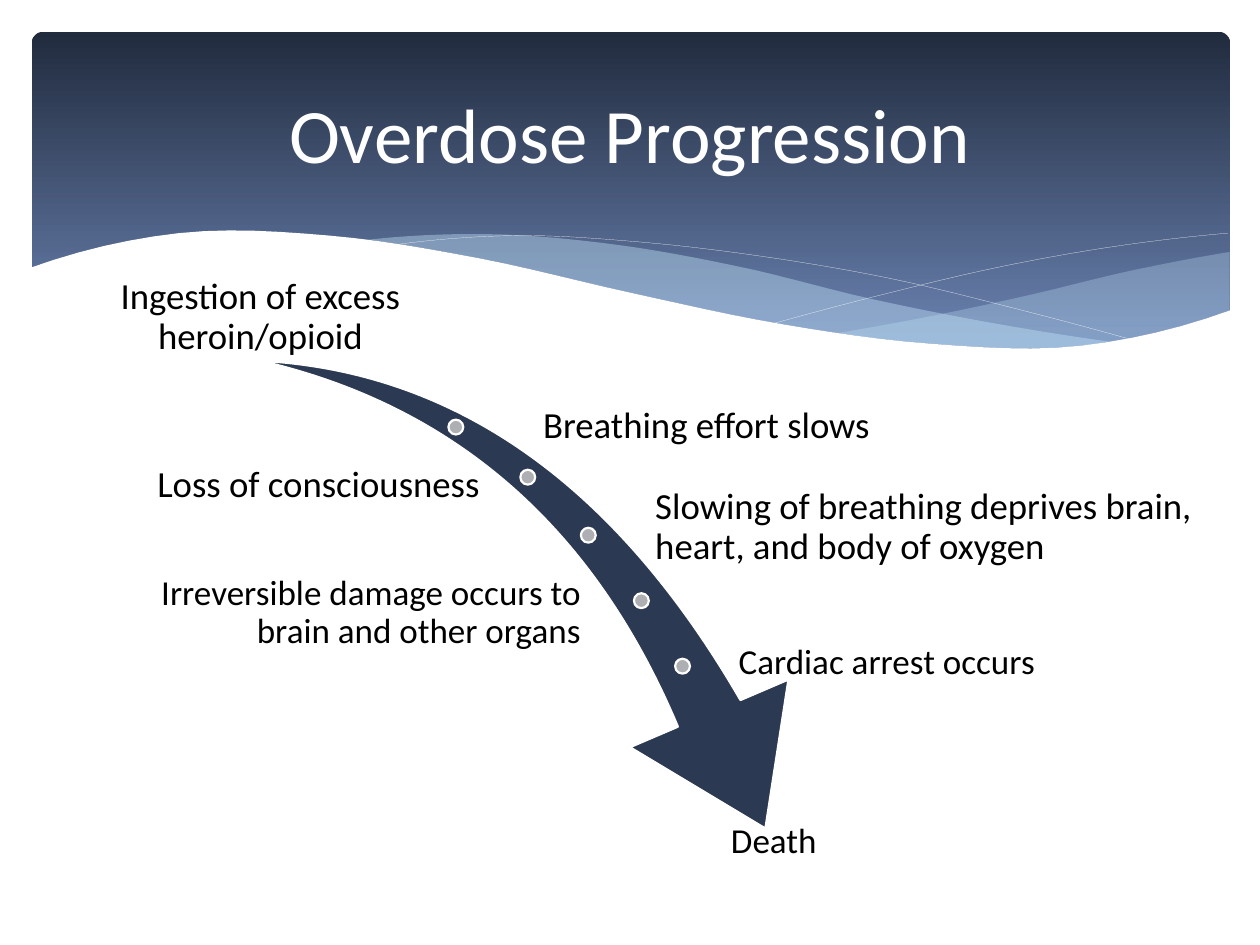
from math import floor

from lxml import etree
from pptx import Presentation
from pptx.dml.color import RGBColor
from pptx.enum.shapes import MSO_SHAPE
from pptx.enum.text import MSO_ANCHOR, PP_ALIGN
from pptx.oxml.ns import qn
from pptx.util import Cm, Pt

ROUND, DOT, SWOOSH = MSO_SHAPE.ROUNDED_RECTANGLE, MSO_SHAPE.OVAL, MSO_SHAPE.SWOOSH_ARROW
LEFT, MID, RIGHT = PP_ALIGN.LEFT, PP_ALIGN.CENTER, PP_ALIGN.RIGHT
TOP, CENTER, BOTTOM = MSO_ANCHOR.TOP, MSO_ANCHOR.MIDDLE, MSO_ANCHOR.BOTTOM

COLORS = {"white": "FFFFFF", "black": "000000", "night": "212B3E", "steel": "6981AF",
          "ice": "C6E7FC", "arrow": "2C3952", "dot": "ADAFB3"}
FONT = "Calibri"

# A wave is its first x, its last x and its depths at equal steps between them,
# all in centimetres from the corner of the banner
SHORE = (-0.06, 24.18, [4.77, 4.06, 4.11, 4.57, 5.26, 5.89, 6.29, 6.33, 5.61])
CREST = (16.15, 24.15, [6.09, 5.73, 5.3, 4.82, 4.44])
SWELL = (6.62, 22.04, [4.21, 4.08, 4.29, 4.75, 5.38, 5.89, 6.29])
FALL = (7.21, 22.4, [4.31, 4.11, 4.24, 4.54, 4.98, 5.59, 6.27])
RISE = (14.93, 24.12, [5.89, 5.28, 4.74, 4.33, 4.06])
FLOOR = 7.72     # lower edge of the white area under the shore
SAMPLES = 48     # straight pieces drawn for each wave

DOT_SIZE, LABEL_HEIGHT = 0.3, 2.21
DOTS = [(7.97, 3.38), (9.42, 4.39), (10.64, 5.56), (11.71, 6.88), (12.54, 8.2)]
# Text, left, top, width, size, alignment, anchor
STEPS = [
    ("Ingestion of excess heroin/opioid", 0, 0, 8.36, 21, MID, BOTTOM),
    ("Breathing effort slows", 9.8, 2.41, 8.53, 21, LEFT, CENTER),
    ("Loss of consciousness", 1.67, 3.61, 7.01, 21, RIGHT, CENTER),
    ("Slowing of breathing deprives brain, heart, and body of oxygen",
     12.06, 4.45, 11.61, 21, LEFT, CENTER),
    ("Irreversible damage occurs to brain and other organs",
     1.17, 6.17, 9.55, 20, RIGHT, CENTER),
    ("Cardiac arrest occurs", 13.74, 7.19, 7.92, 20, LEFT, CENTER),
    ("Death", 10.72, 11.43, 7.62, 20, MID, TOP),
]


def rgb(name):
    return RGBColor.from_string(COLORS[name])


def assign(item, values):
    for key, value in values.items():
        setattr(item, key, value)


def paint(shape, fill=None, line=None, width=1.25, alpha=100):
    shape.shadow.inherit = False
    if fill:
        shape.fill.solid()
        shape.fill.fore_color.rgb = rgb(fill)
        if alpha < 100:
            color = shape.fill._xPr.find(".//" + qn("a:srgbClr"))
            etree.SubElement(color, qn("a:alpha"), val=str(alpha * 1000))
    else:
        shape.fill.background()
    if line:
        shape.line.color.rgb = rgb(line)
        shape.line.width = Pt(width)
    else:
        shape.line.fill.background()


def write(frame, text, size, color, align, **values):
    assign(frame, {"word_wrap": True, **values})
    para = frame.paragraphs[0]
    para.alignment = align
    run = para.add_run()
    run.text = text
    assign(run.font, {"name": FONT, "size": Pt(size)})
    run.font.color.rgb = rgb(color)
    return para


def depth(wave, x):
    """Depth of a wave at x, on a Catmull-Rom spline through its knots."""
    first, last, knots = wave
    # One more knot at each end, continuing the bend
    before = 3 * knots[0] - 3 * knots[1] + knots[2]
    after = 3 * knots[-1] - 3 * knots[-2] + knots[-3]
    knots = [before, *knots, after]
    spans = len(knots) - 3
    place = (x - first) / (last - first) * spans
    i = min(max(floor(place), 0), spans - 1)
    t = place - i
    a, b, c, d = knots[i:i + 4]
    return b + t / 2 * (c - a + t * (2 * a - 5 * b + 4 * c - d
                                     + t * (3 * (b - c) + d - a)))


def trace(wave, first, last):
    """Points along a wave from one x to another."""
    step = (last - first) / SAMPLES
    return [(x, depth(wave, x)) for x in (first + n * step for n in range(SAMPLES + 1))]


def outline(slide, left, top, points, close):
    points = [(Cm(x), Cm(y)) for x, y in points]
    pen = slide.shapes.build_freeform(*points[0])
    pen.add_line_segments(points[1:], close=close)
    return pen.convert_to_shape(Cm(left), Cm(top))


def banner(slide, left, top, width, height):
    # Gradient panel
    panel = slide.shapes.add_shape(ROUND, Cm(left), Cm(top), Cm(width), Cm(height))
    paint(panel)
    panel.adjustments[0] = 0.034
    panel.fill.gradient()
    panel.fill.gradient_angle = 270
    for stop, name, place in zip(panel.fill.gradient_stops, ("night", "steel"), (0, 0.9)):
        stop.color.rgb = rgb(name)
        stop.position = place
    # Clear bands between a wave and the shore
    for wave, alpha in ((CREST, 29), (SWELL, 40)):
        first, last, _ = wave
        edge = trace(wave, first, last) + trace(SHORE, last, first)
        paint(outline(slide, left, top, edge, True), "ice", alpha=alpha)
    # Hairlines
    for wave in (FALL, RISE):
        line = outline(slide, left, top, trace(wave, *wave[:2]), False)
        paint(line, line="white", width=0.1)
    # White area below the shore
    first, last, _ = SHORE
    edge = trace(SHORE, first, last) + [(last, FLOOR), (first, FLOOR)]
    paint(outline(slide, left, top, edge, True), "white")


def heading(slide, left, top, width, height):
    title = slide.shapes.title
    assign(title, {"left": Cm(left), "top": Cm(top),
                   "width": Cm(width), "height": Cm(height)})
    write(title.text_frame, "Overdose Progression", 44, "white", MID,
          vertical_anchor=CENTER)
    # Bring the title in front of the banner
    slide.shapes._spTree.append(title._element)


def descent(slide, left, top):
    # Curved arrow
    arrow = slide.shapes.add_shape(SWOOSH, Cm(left + 3.91), Cm(top + 2.54),
                                   Cm(11.96), Cm(8.36))
    arrow.rotation = 73.3
    arrow.adjustments[0], arrow.adjustments[1] = 0.163, 0.314
    paint(arrow, "arrow", "white")
    # Dots along the arrow
    for x, y in DOTS:
        dot = slide.shapes.add_shape(DOT, Cm(left + x), Cm(top + y),
                                     Cm(DOT_SIZE), Cm(DOT_SIZE))
        paint(dot, "dot", "white")
    # Step labels
    inset = {"margin_" + side: Cm(0.08) for side in ("left", "top", "right", "bottom")}
    for text, x, y, width, size, align, anchor in STEPS:
        box = slide.shapes.add_textbox(Cm(left + x), Cm(top + y),
                                       Cm(width), Cm(LABEL_HEIGHT))
        para = write(box.text_frame, text, size, "black", align,
                     vertical_anchor=anchor, **inset)
        para.line_spacing = 0.9


def main():
    deck = Presentation()
    deck.slide_width, deck.slide_height = Cm(25.4), Cm(19.05)
    slide = deck.slides.add_slide(deck.slide_layouts[5])
    banner(slide, 0.64, 0.64, 24.16, 6.86)
    descent(slide, 1.07, 5.08)
    heading(slide, 1.27, 0.94, 22.86, 3.48)
    deck.save("out.pptx")


if __name__ == "__main__":
    main()
